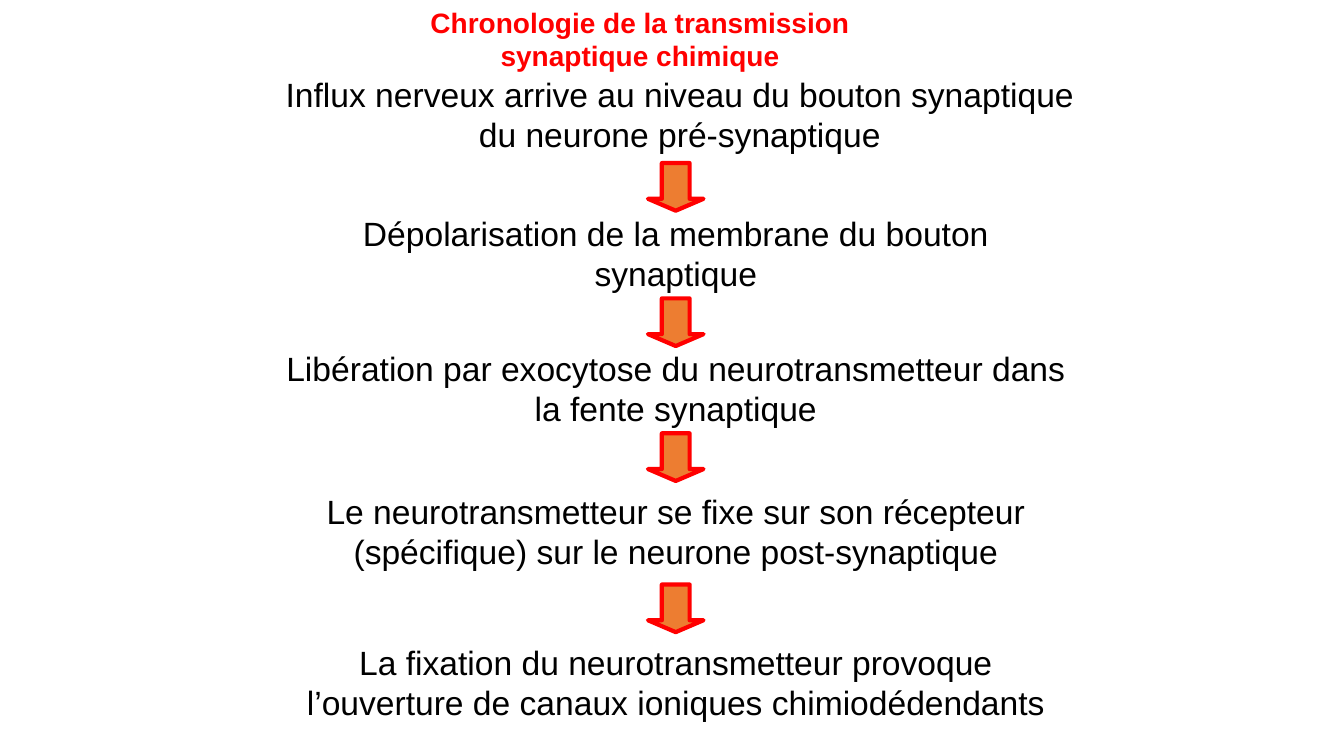
from collections import namedtuple
from dataclasses import dataclass

from pptx import Presentation
from pptx.dml.color import RGBColor
from pptx.enum import shapes, text
from pptx.util import Cm, Pt

Box = namedtuple("Box", "left top width height")


@dataclass(frozen=True)
class Theme:
    font: str = "Arial"
    title_size: int = 20
    step_size: int = 24
    title_color: str = "FF0000"
    step_color: str = "000000"
    arrow_fill: str = "ED7D31"
    arrow_line: str = "FF0000"
    arrow_line_width: int = 3


THEME = Theme()
TITLE = "Chronologie de la transmission synaptique chimique"

# Each step: wording, text top, box width, top of the arrow that follows (cm)
STEPS = [
    ("Influx nerveux arrive au niveau du bouton synaptique du neurone pré-synaptique",
     1.73, 20.4, 4.11),
    ("Dépolarisation de la membrane du bouton synaptique",
     5.23, 20.2, 7.52),
    ("Libération par exocytose du neurotransmetteur dans la fente synaptique",
     8.64, 20.2, 10.92),
    ("Le neurotransmetteur se fixe sur son récepteur (spécifique) sur le neurone post-synaptique",
     12.24, 20.2, 14.73),
    ("La fixation du neurotransmetteur provoque l’ouverture de canaux ioniques chimiodédendants",
     16.05, 20.2, None),
]


def set_values(target, values):
    for name, value in values.items():
        setattr(target, name, value)


def place(shape, box):
    set_values(shape, {name: Cm(length) for name, length in box._asdict().items()})


def write_text(shape, wording, size, color, bold=False):
    frame = shape.text_frame
    set_values(frame, {
        "text": wording,
        "word_wrap": True,
        "auto_size": text.MSO_AUTO_SIZE.NONE,
        "vertical_anchor": text.MSO_ANCHOR.TOP,
    })
    paragraph = frame.paragraphs[0]
    paragraph.alignment = text.PP_ALIGN.CENTER
    font = paragraph.runs[0].font
    set_values(font, {"name": THEME.font, "size": Pt(size), "bold": bold})
    font.color.rgb = RGBColor.from_string(color)


def add_title(slide, box):
    title = slide.shapes.title
    place(title, box)
    write_text(title, TITLE, THEME.title_size, THEME.title_color, bold=True)


def add_step(slide, box, wording):
    step = slide.shapes.add_textbox(*map(Cm, box))
    write_text(step, wording, THEME.step_size, THEME.step_color)


def add_arrow(slide, box):
    arrow = slide.shapes.add_shape(shapes.MSO_SHAPE.DOWN_ARROW, *map(Cm, box))
    arrow.adjustments[0] = 0.5
    arrow.adjustments[1] = 0.25
    arrow.shadow.inherit = False
    arrow.fill.solid()
    arrow.fill.fore_color.rgb = RGBColor.from_string(THEME.arrow_fill)
    arrow.line.color.rgb = RGBColor.from_string(THEME.arrow_line)
    arrow.line.width = Pt(THEME.arrow_line_width)


def add_chronology(slide, box):
    arrow_width, arrow_height, step_height = 1.4, 1.2, 2.3
    arrow_left = box.left + (box.width - arrow_width) / 2
    for wording, step_top, step_width, arrow_top in STEPS:
        add_step(slide, Box(box.left, box.top + step_top, step_width, step_height), wording)
        if arrow_top is not None:
            add_arrow(slide, Box(arrow_left, box.top + arrow_top, arrow_width, arrow_height))


def main():
    presentation = Presentation()
    set_values(presentation, {"slide_width": Cm(33.87), "slide_height": Cm(19.05)})
    title_only = presentation.slide_layouts[5]
    slide = presentation.slides.add_slide(title_only)
    add_title(slide, Box(9.78, 0, 12.7, 2.74))
    add_chronology(slide, Box(6.93, 0, 20.2, 19.05))
    presentation.save("out.pptx")


if __name__ == "__main__":
    main()
